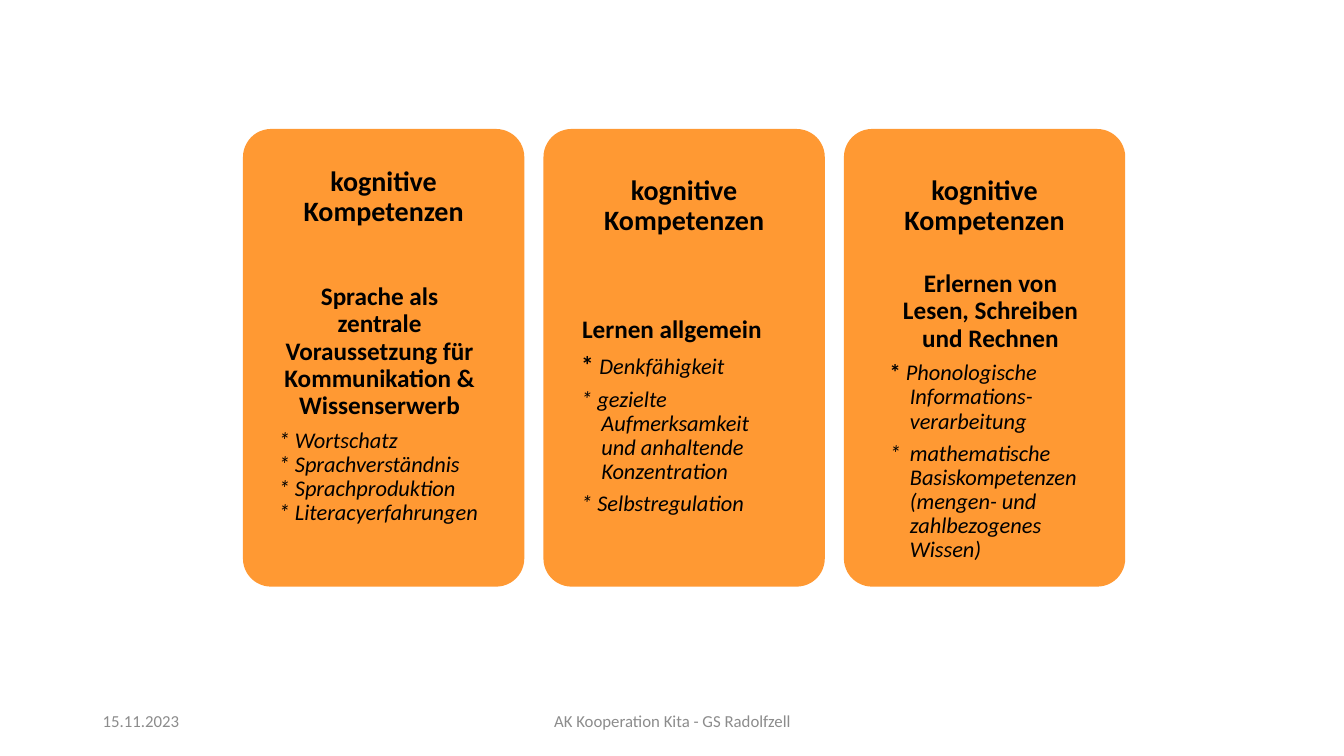
from dataclasses import dataclass

from pptx import Presentation
from pptx import util as u
from pptx.dml.color import RGBColor
from pptx.enum import shapes, text
from pptx.oxml import ns
from lxml import etree

ORANGE = RGBColor(0xFF, 0x99, 0x33)
BLACK = RGBColor(0, 0, 0)
GREY = RGBColor(0x8C, 0x8C, 0x8C)
FONT = "Calibri"

CARD_LEFT, CARD_TOP, CARD_PITCH = 2.41, 1.28, 2.98
CARD_WIDTH, CARD_HEIGHT = 2.79, 4.54
HEADING_HEIGHT = 1.36
PANEL_TOP, PANEL_WIDTH, PANEL_HEIGHT = 2.66, 2.23, 2.95
HANGING = 0.2
CENTER, LEFT = text.PP_ALIGN.CENTER, text.PP_ALIGN.LEFT


@dataclass(frozen=True)
class Piece:
    wording: str
    size: int = 16
    bold: bool = False
    italic: bool = True


@dataclass(frozen=True)
class Card:
    topic: str
    items: list[list[Piece]]
    panel_left: float
    heading_shift: float = 0.09
    topic_right_indent: float = 0
    item_gap: float = 0.35  # share of the text size
    panel_bottom_inset: float = 0.04


CARDS = [
    Card(
        "Sprache als zentrale Voraussetzung für Kommunikation & Wissenserwerb",
        [
            [Piece("* Wortschatz")],
            [Piece("* Sprachverständnis")],
            [Piece("* Sprachproduktion")],
            [Piece("* Literacyerfahrungen")],
        ],
        panel_left=2.65,
        heading_shift=0,
        item_gap=0,
        panel_bottom_inset=0.28,
    ),
    Card(
        "Lernen allgemein",
        [
            [Piece("* ", 18, True, False), Piece("Denkfähigkeit")],
            [Piece("* gezielte Aufmerksamkeit und anhaltende Konzentration")],
            [Piece("* Selbstregulation")],
        ],
        panel_left=5.65,
        topic_right_indent=0.2,
    ),
    Card(
        "Erlernen von Lesen, Schreiben und Rechnen",
        [
            [Piece("* ", 16, True, False), Piece("Phonologische Informations-verarbeitung")],
            [Piece("*\tmathematische Basiskompetenzen (mengen- und zahlbezogenes Wissen)")],
        ],
        panel_left=8.71,
    ),
]


def set_up_frame(frame, side: float, top: float, bottom: float) -> None:
    frame.word_wrap = True
    frame.vertical_anchor = text.MSO_ANCHOR.MIDDLE
    frame.margin_left = frame.margin_right = u.Inches(side)
    frame.margin_top, frame.margin_bottom = u.Inches(top), u.Inches(bottom)


def write(paragraph, pieces: list[Piece], align, gap: float = 0.35,
          color: RGBColor = BLACK, line_spacing: float = 0.9) -> None:
    paragraph.alignment = align
    paragraph.line_spacing = line_spacing
    paragraph.space_after = u.Pt(gap * pieces[-1].size)
    for piece in pieces:
        run = paragraph.add_run()
        run.text = piece.wording
        run.font.name = FONT
        run.font.size = u.Pt(piece.size)
        run.font.bold, run.font.italic = piece.bold, piece.italic
        run.font.color.rgb = color


def add_rounded(slide, left: float, top: float, width: float, height: float):
    box = slide.shapes.add_shape(
        shapes.MSO_SHAPE.ROUNDED_RECTANGLE,
        u.Inches(left), u.Inches(top), u.Inches(width), u.Inches(height))
    box.adjustments[0] = 0.1
    box.shadow.inherit = False
    box.fill.solid()
    box.fill.fore_color.rgb = ORANGE
    box.line.fill.background()
    return box


def add_label(slide, left: float, top: float, width: float, height: float):
    return slide.shapes.add_textbox(
        u.Inches(left), u.Inches(top), u.Inches(width), u.Inches(height)).text_frame


def make_half_transparent(shape) -> None:
    color = shape.fill._xPr.find(ns.qn("a:solidFill"))[0]
    etree.SubElement(color, ns.qn("a:alpha")).set("val", "50000")


def add_card(slide, card: Card, left: float) -> None:
    add_rounded(slide, left, CARD_TOP, CARD_WIDTH, CARD_HEIGHT)
    heading = add_label(slide, left, CARD_TOP + card.heading_shift, CARD_WIDTH, HEADING_HEIGHT)
    set_up_frame(heading, 0.08, 0.08, 0.08)
    write(heading.paragraphs[0], [Piece("kognitive Kompetenzen", 20, True, False)], CENTER)

    panel = add_rounded(slide, card.panel_left, PANEL_TOP, PANEL_WIDTH, PANEL_HEIGHT)
    make_half_transparent(panel)
    body = panel.text_frame
    set_up_frame(body, 0.05, 0.04, card.panel_bottom_inset)
    topic = body.paragraphs[0]
    write(topic, [Piece(card.topic, 18, True, False)], CENTER)
    topic._p.get_or_add_pPr().set("marR", str(u.Inches(card.topic_right_indent)))
    for pieces in card.items:
        item = body.add_paragraph()
        write(item, pieces, LEFT, card.item_gap)
        properties = item._p.get_or_add_pPr()
        properties.set("marL", str(u.Inches(HANGING)))
        properties.set("indent", str(u.Inches(-HANGING)))


def add_footer(slide, wording: str, left: float, width: float, align) -> None:
    footer = add_label(slide, left, 6.95, width, 0.4)
    set_up_frame(footer, 0.1, 0.05, 0.05)
    write(footer.paragraphs[0], [Piece(wording, 12, italic=False)], align,
          gap=0, color=GREY, line_spacing=1.0)


def main() -> None:
    deck = Presentation()
    deck.slide_width, deck.slide_height = u.Inches(13.33), u.Inches(7.5)
    slide = deck.slides.add_slide(deck.slide_layouts[6])
    add_footer(slide, "15.11.2023", 0.92, 3, LEFT)
    add_footer(slide, "AK Kooperation Kita - GS Radolfzell", 4.42, 4.5, CENTER)
    for column, card in enumerate(CARDS):
        add_card(slide, card, CARD_LEFT + column * CARD_PITCH)
    deck.save("out.pptx")


if __name__ == "__main__":
    main()
